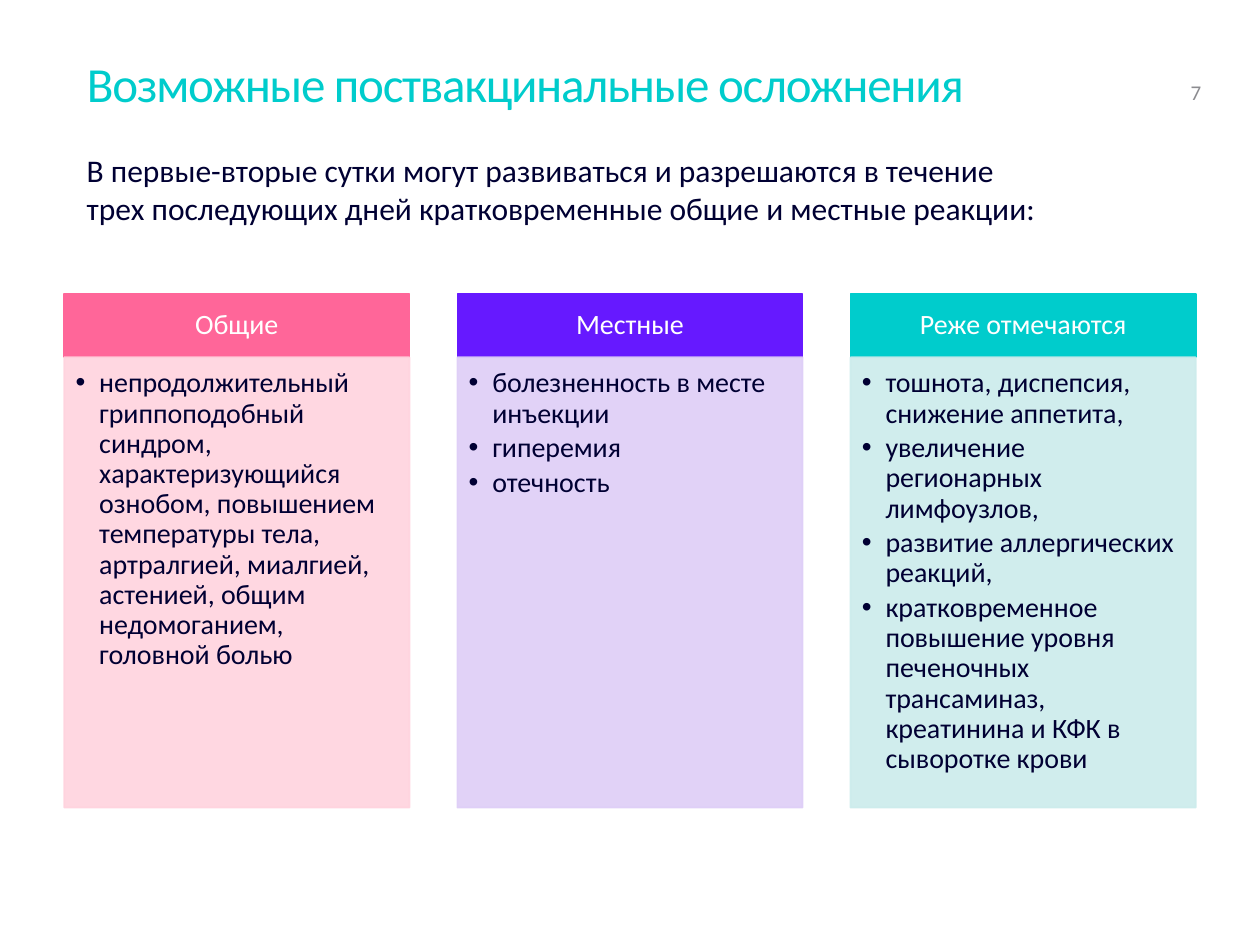
from pptx import Presentation
from pptx.dml.color import RGBColor
from pptx.enum.shapes import MSO_SHAPE as Shape
from pptx.enum.text import MSO_ANCHOR as Anchor, MSO_AUTO_SIZE as Fit, PP_ALIGN as Align
from pptx.oxml.ns import qn
from pptx.util import Pt
from lxml.etree import SubElement

FONT = "Calibri"
NAVY, WHITE, TEAL, GREY = "000033", "FFFFFF", "00CCCC", "8C8C90"
TITLE = "Возможные поствакцинальные осложнения"
INTRO = ("В первые-вторые сутки могут развиваться и разрешаются в течение "
         "трех последующих дней кратковременные общие и местные реакции:")
CARDS = [
    ("Общие", "FF6699", "FFD3DE", [
        "непродолжительный гриппоподобный синдром, характеризующийся ознобом, "
        "повышением температуры тела, артралгией, миалгией, астенией, общим "
        "недомоганием, головной болью"]),
    ("Местные", "6619FF", "DECEF7", [
        "болезненность в месте инъекции", "гиперемия", "отечность"]),
    ("Реже отмечаются", TEAL, "CBECEC", [
        "тошнота, диспепсия, снижение аппетита,",
        "увеличение регионарных лимфоузлов,",
        "развитие аллергических реакций,",
        "кратковременное повышение уровня печеночных трансаминаз, "
        "креатинина и КФК в сыворотке крови"]),
]


def rgb(code):
    return RGBColor.from_string(code)


def add_bullet(par, indent):
    props = par._p.get_or_add_pPr()
    props.set("marL", str(Pt(indent)))
    props.set("indent", str(-Pt(indent)))
    SubElement(props, qn("a:buFont"), typeface="Arial")
    SubElement(props, qn("a:buChar"), char="•")


def write(shape, lines, size, color, align=Align.LEFT, anchor=Anchor.TOP,
          pads=(7.2, 3.6, 7.2, 3.6), wrap=True, lead=None, after=0,
          indent=0, track=0):
    """Fill a shape with one paragraph per line; pads run left, top, right, bottom."""
    frame = shape.text_frame
    frame.auto_size = Fit.NONE
    frame.word_wrap = wrap
    frame.vertical_anchor = anchor
    (frame.margin_left, frame.margin_top,
     frame.margin_right, frame.margin_bottom) = map(Pt, pads)
    for i, line in enumerate(lines):
        par = frame.paragraphs[0] if i == 0 else frame.add_paragraph()
        par.alignment = align
        par.space_after = Pt(after)
        if lead:
            par.line_spacing = lead
        if indent:
            add_bullet(par, indent)
        run = par.add_run()
        run.text = line
        run.font.name = FONT
        run.font.size = Pt(size)
        run.font.color.rgb = rgb(color)
        if track:
            run._r.get_or_add_rPr().set("spc", str(round(track * 100)))


def add_rect(slide, box, color, alpha=100):
    rect = slide.shapes.add_shape(Shape.RECTANGLE, *map(Pt, box))
    rect.shadow.inherit = False
    rect.fill.solid()
    rect.fill.fore_color.rgb = rgb(color)
    rect.line.color.rgb = rgb(color)
    rect.line.width = Pt(1)
    if alpha < 100:
        for tone in rect._element.spPr.iter(qn("a:srgbClr")):
            SubElement(tone, qn("a:alpha"), val=str(alpha * 1000))
    return rect


def add_title(slide, box):
    title = slide.shapes.title
    title.left, title.top, title.width, title.height = map(Pt, box)
    write(title, [TITLE], 28, TEAL, pads=(0, 3.6, 0, 3.6), lead=Pt(32), track=-0.7)


def add_text(slide, box, text, size, color, **style):
    write(slide.shapes.add_textbox(*map(Pt, box)), [text], size, color, **style)


def add_card(slide, box, name, dark, pale, items):
    left, top, width, height = box
    head = 36
    write(add_rect(slide, (left, top, width, head), dark), [name], 16, WHITE,
          align=Align.CENTER, anchor=Anchor.MIDDLE, pads=(8.5, 5, 8.5, 5), lead=0.9)
    body = add_rect(slide, (left, top + head, width, height - head), pale, alpha=90)
    write(body, items, 16, NAVY, pads=(6.5, 6.5, 8.5, 10), lead=0.9,
          after=2.5, indent=13.5)


def add_cards(slide, box, gap):
    left, top, width, height = box
    count = len(CARDS)
    wide = (width - gap * (count - 1)) / count
    for i, card in enumerate(CARDS):
        add_card(slide, (left + i * (wide + gap), top, wide, height), *card)


def main():
    deck = Presentation()
    deck.slide_width, deck.slide_height = Pt(720), Pt(540)
    slide = deck.slides.add_slide(deck.slide_layouts[5])
    add_title(slide, (49.7, 28.8, 620.6, 74.2))
    add_text(slide, (680.4, 28.8, 27.4, 33.8), "7", 12, GREY,
             anchor=Anchor.BOTTOM, pads=(0, 2.9, 0, 2.9), wrap=False)
    add_cards(slide, (36.7, 168.2, 646.6, 293.3), gap=27.4)
    add_text(slide, (42.5, 82.8, 561.6, 72.7), INTRO, 18, NAVY)
    deck.save("out.pptx")


if __name__ == "__main__":
    main()
